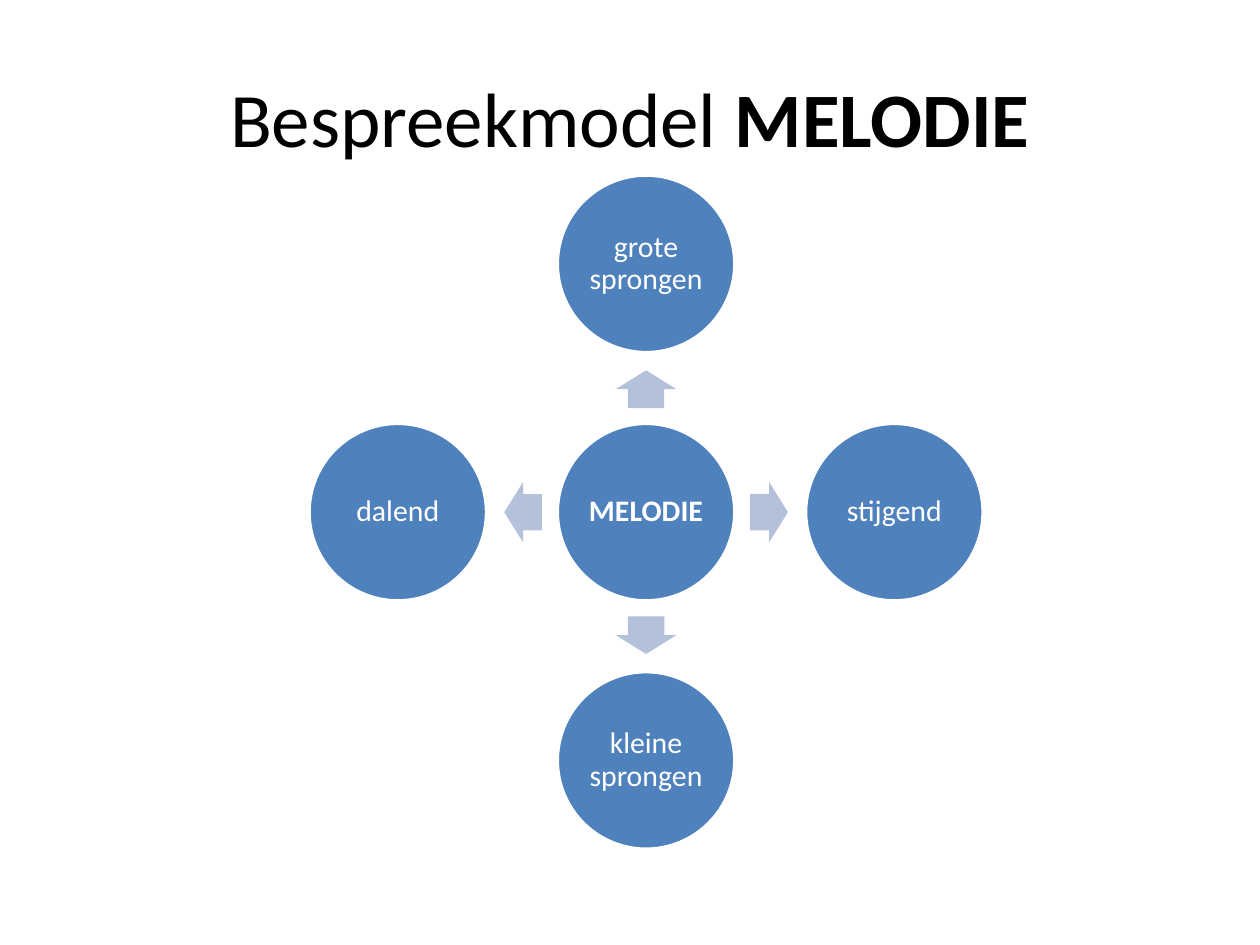
from dataclasses import dataclass

from pptx import Presentation
from pptx import util as u
from pptx.dml.color import RGBColor
from pptx.enum import shapes, text


@dataclass(frozen=True)
class Theme:
    font: str = "Calibri"
    ink: RGBColor = RGBColor(0, 0, 0)
    paper: RGBColor = RGBColor(255, 255, 255)
    circle: RGBColor = RGBColor(0x4F, 0x81, 0xBD)
    arrow: RGBColor = RGBColor(0xB3, 0xC1, 0xDB)
    title_size: int = 44
    label_size: int = 17
    outline: int = 2


THEME = Theme()
DIAMETER = 3.58
ARROW_LENGTH, ARROW_WIDTH = 0.76, 1.22
ARROW_REACH = 2.48  # from the hub's centre to an arrow's centre

# label, horizontal step, vertical step, arrow rotation
BRANCHES = [
    ("grote sprongen", 0, -1, 270),
    ("stijgend", 1, 0, 0),
    ("kleine sprongen", 0, 1, 90),
    ("dalend", -1, 0, 180),
]


def apply(target, formats):
    for name, value in formats.items():
        setattr(target, name, value)


def write(shape, spans, size, color, inset):
    """Fill a shape with one centred paragraph of (text, bold) spans."""
    frame = shape.text_frame
    margins = ("margin_left", "margin_top", "margin_right", "margin_bottom")
    apply(frame, dict.fromkeys(margins, u.Cm(inset)))
    apply(frame, {"word_wrap": True, "vertical_anchor": text.MSO_ANCHOR.MIDDLE})
    para = frame.paragraphs[0]
    para.alignment = text.PP_ALIGN.CENTER
    for words, bold in spans:
        span = para.add_run()
        span.text = words
        apply(span.font, {"name": THEME.font, "size": u.Pt(size), "bold": bold})
        span.font.color.rgb = color
    return para


def add_centred(group, kind, x, y, width, height, color):
    """Add a plain filled shape around the point x, y."""
    shape = group.shapes.add_shape(
        kind, u.Cm(x - width / 2), u.Cm(y - height / 2), u.Cm(width), u.Cm(height))
    shape.shadow.inherit = False
    shape.fill.solid()
    shape.fill.fore_color.rgb = color
    shape.line.fill.background()
    return shape


def add_circle(group, x, y, label, bold=False):
    circle = add_centred(group, shapes.MSO_SHAPE.OVAL, x, y,
                         DIAMETER, DIAMETER, THEME.circle)
    circle.line.color.rgb = THEME.paper
    circle.line.width = u.Pt(THEME.outline)
    para = write(circle, [(label, bold)], THEME.label_size, THEME.paper, 0.05)
    para.line_spacing = 0.9


def add_arrow(group, x, y, rotation):
    arrow = add_centred(group, shapes.MSO_SHAPE.RIGHT_ARROW, x, y,
                        ARROW_LENGTH, ARROW_WIDTH, THEME.arrow)
    arrow.adjustments[0] = 0.6
    arrow.adjustments[1] = 0.5
    arrow.rotation = rotation


def add_title(page, left, top, width, height):
    box = page.shapes.add_textbox(u.Cm(left), u.Cm(top), u.Cm(width), u.Cm(height))
    write(box, [("Bespreekmodel ", False), ("MELODIE", True)],
          THEME.title_size, THEME.ink, 0.25)


def add_radial_diagram(page, left, top, side):
    """Place a hub and its four branches in a square box."""
    group = page.shapes.add_group_shape()
    x, y = left + side / 2, top + side / 2
    reach = (side - DIAMETER) / 2
    add_circle(group, x, y, "MELODIE", bold=True)
    for label, across, down, rotation in BRANCHES:
        add_arrow(group, x + across * ARROW_REACH, y + down * ARROW_REACH, rotation)
        add_circle(group, x + across * reach, y + down * reach, label)


def main():
    deck = Presentation()
    deck.slide_width, deck.slide_height = u.Cm(25.4), u.Cm(19.05)
    page = deck.slides.add_slide(deck.slide_layouts[6])
    add_title(page, 1.27, 0.76, 22.86, 3.18)
    add_radial_diagram(page, 6.23, 3.53, 13.59)
    deck.save("out.pptx")


if __name__ == "__main__":
    main()
